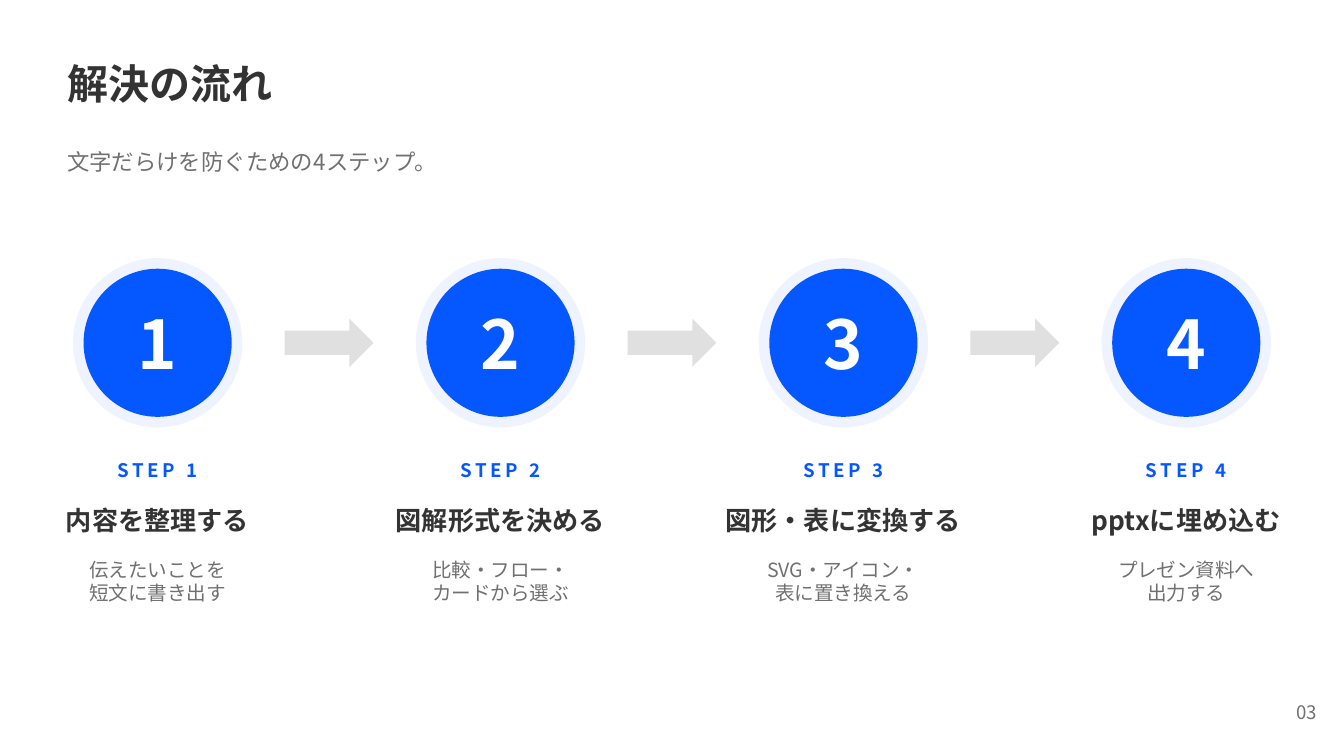
from lxml.etree import SubElement
from pptx import Presentation
from pptx.dml.color import RGBColor
from pptx.enum.shapes import MSO_SHAPE as SHAPE
from pptx.enum.text import MSO_ANCHOR as ANCHOR, PP_ALIGN as ALIGN
from pptx.oxml.ns import qn
from pptx.util import Cm, Pt

FONT = "Noto Sans CJK JP"
BLUE = RGBColor(0x05, 0x57, 0xFF)
PALE_BLUE = RGBColor(0xEE, 0xF3, 0xFF)
DARK = RGBColor(0x33, 0x33, 0x33)
GRAY = RGBColor(0x70, 0x70, 0x70)
LIGHT_GRAY = RGBColor(0xE0, 0xE0, 0xE0)
WHITE = RGBColor(0xFF, 0xFF, 0xFF)

STEPS = [
    ("内容を整理する", ["伝えたいことを", "短文に書き出す"]),
    ("図解形式を決める", ["比較・フロー・", "カードから選ぶ"]),
    ("図形・表に変換する", ["SVG・アイコン・", "表に置き換える"]),
    ("pptxに埋め込む", ["プレゼン資料へ", "出力する"]),
]
FIRST_CENTER, PITCH = 2.98, 6.48
CIRCLE_Y = 6.48
RING_D, DISC_D = 3.2, 2.8
ARROW_W, ARROW_H = 1.68, 0.91
COLUMN_W = 4.7

prs = Presentation()
prs.slide_width, prs.slide_height = Cm(25.4), Cm(14.29)
s = prs.slides.add_slide(prs.slide_layouts[6])


def add_text(box, lines, size, color, bold=False, align=ALIGN.LEFT,
             anchor=ANCHOR.MIDDLE, spacing=0):
    """Fill a box, given as a shape or as (left, top, width, height) in cm."""
    if isinstance(box, tuple):
        box = s.shapes.add_textbox(*map(Cm, box))
    tf = box.text_frame
    tf.word_wrap = True
    tf.vertical_anchor = anchor
    tf.margin_left = tf.margin_top = tf.margin_right = tf.margin_bottom = 0
    for i, line in enumerate(lines):
        p = tf.paragraphs[0] if i == 0 else tf.add_paragraph()
        p.text = line
        p.alignment = align
        p.font.size, p.font.bold, p.font.name = Pt(size), bold, FONT
        p.font.color.rgb = color
        props = p._p.pPr.find(qn("a:defRPr"))
        SubElement(props, qn("a:ea")).set("typeface", FONT)
        if spacing:
            props.set("spc", str(spacing * 100))


def add_centered(kind, cx, cy, w, h, color):
    sp = s.shapes.add_shape(kind, Cm(cx - w / 2), Cm(cy - h / 2), Cm(w), Cm(h))
    sp.shadow.inherit = False
    sp.fill.solid()
    sp.fill.fore_color.rgb = color
    sp.line.fill.background()
    return sp


add_text((1.27, 0.81, 22.86, 1.52), ["解決の流れ"], 22, DARK, bold=True)
add_text((1.27, 2.54, 22.86, 1.02), ["文字だらけを防ぐための4ステップ。"], 12, GRAY)

for i, (heading, details) in enumerate(STEPS):
    cx = FIRST_CENTER + i * PITCH
    left = cx - COLUMN_W / 2
    add_centered(SHAPE.OVAL, cx, CIRCLE_Y, RING_D, RING_D, PALE_BLUE)
    disc = add_centered(SHAPE.OVAL, cx, CIRCLE_Y, DISC_D, DISC_D, BLUE)
    add_text(disc, [str(i + 1)], 36, WHITE, bold=True, align=ALIGN.CENTER)
    add_text((left, 8.51, COLUMN_W, 0.76), [f"STEP {i + 1}"], 10, BLUE,
             bold=True, align=ALIGN.CENTER, spacing=2)
    add_text((left, 9.27, COLUMN_W, 1.14), [heading], 14, DARK,
             bold=True, align=ALIGN.CENTER)
    add_text((left, 10.54, COLUMN_W, 2.03), details, 10.5, GRAY,
             align=ALIGN.CENTER, anchor=ANCHOR.TOP)
    if i < len(STEPS) - 1:
        add_centered(SHAPE.RIGHT_ARROW, cx + PITCH / 2, CIRCLE_Y,
                     ARROW_W, ARROW_H, LIGHT_GRAY)

add_text((23.62, 13.08, 1.27, 0.76), ["03"], 10, GRAY, align=ALIGN.RIGHT)

prs.save("out.pptx")
